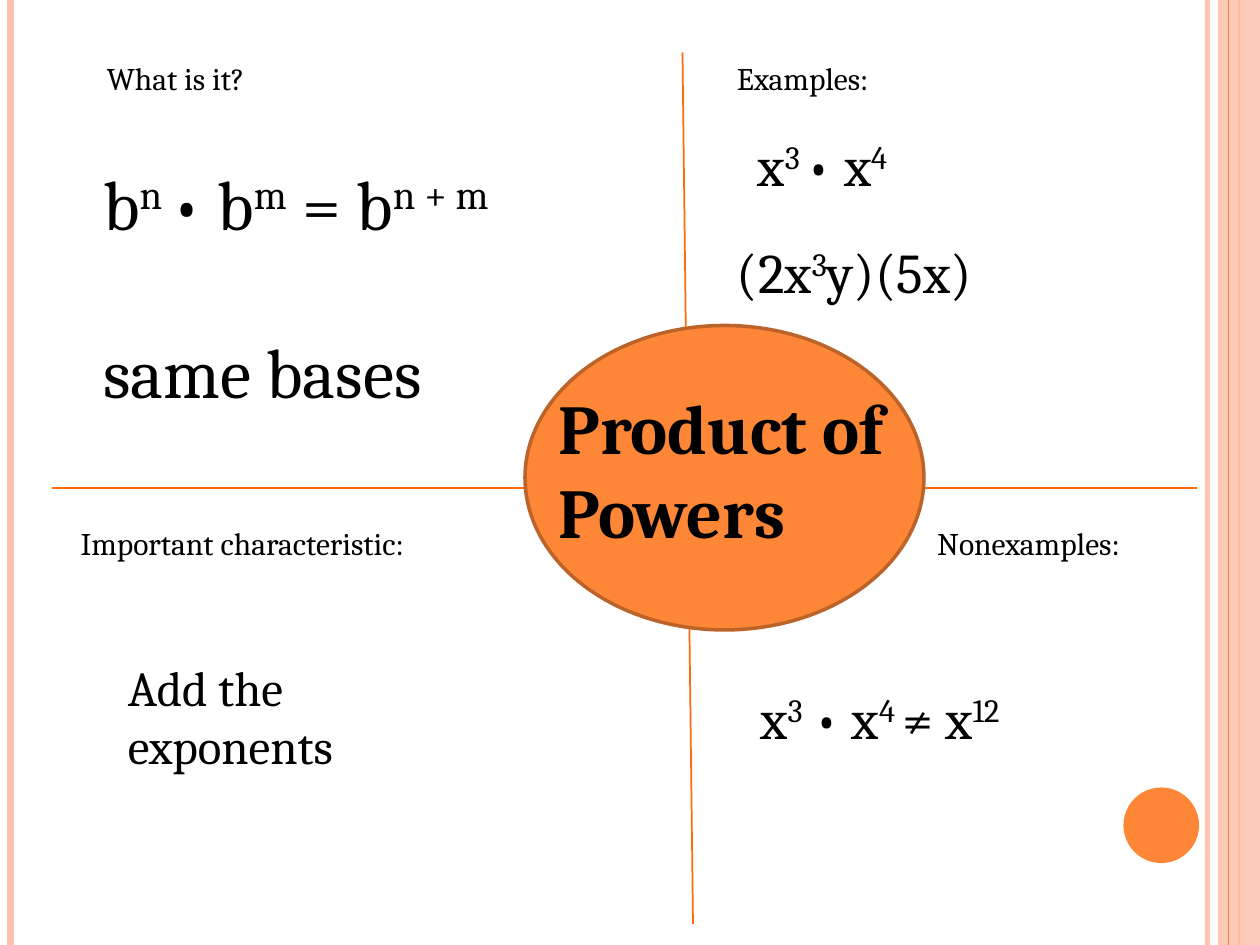
from dataclasses import dataclass

from lxml import etree
from pptx import Presentation
from pptx.dml.color import RGBColor
from pptx.enum import shapes, text
from pptx.oxml.ns import qn
from pptx.util import Pt


@dataclass(frozen=True)
class Theme:
    font: str = "Cambria"
    ink: str = "000000"
    orange: str = "FE8637"
    outline: str = "BC6329"
    divider: str = "FF6B0A"
    peach: str = "FEC3AE"
    label: float = 18
    note: float = 28
    example: float = 32
    headline: float = 40


@dataclass(frozen=True)
class Line:
    start: tuple[float, float]
    end: tuple[float, float]
    color: str
    width: float
    opacity: int = 100


@dataclass(frozen=True)
class TextBlock:
    """Each paragraph alternates plain and superscript pieces, plain first."""
    left: float
    top: float
    width: float
    height: float
    size: float
    paragraphs: tuple[tuple[str, ...], ...]
    wrap: bool = True
    gap: float = 0


THEME = Theme()
WIDTH, HEIGHT = 720, 540


def stripe(x: float, color: str, width: float, opacity: int = 100) -> Line:
    return Line((x, 0), (x, HEIGHT), color, width, opacity)


def label(left: float, top: float, width: float, wording: str) -> TextBlock:
    return TextBlock(left, top, width, 29, THEME.label, ((wording,),))


def example(left: float, top: float, width: float, *pieces: str) -> TextBlock:
    return TextBlock(left, top, width, 46, THEME.example, (pieces,), wrap=False)


EDGE_STRIPES = (
    stripe(690, THEME.peach, 3, 93),
    stripe(6, THEME.peach, 4.5),
    stripe(708, THEME.orange, 1.5),
)
BAND_STRIPE = stripe(702, THEME.orange, 0.75)
DIVIDERS = (
    Line((390, 30), (396, 528), THEME.divider, 1),
    Line((30, 279), (684, 279), THEME.divider, 1),
)
TEXT_BLOCKS = (
    label(414, 30, 174, "Examples:"),
    label(54, 30, 222, "What is it?"),
    TextBlock(52, 88, 288, 225, THEME.headline,
              (("b", "n ", "• b", "m", " = b", "n + m"), ("same bases",)),
              wrap=False, gap=48),
    label(528.5, 296, 174, "Nonexamples:"),
    label(39, 296, 261, "Important characteristic:"),
    TextBlock(66, 372, 228, 75, THEME.note, (("Add the",), ("exponents",))),
    example(426, 71, 120, "x", "3 ", "• x", "4"),
    example(414, 132, 166, "(2x", "3", "y)(5x)"),
    example(427.5, 387, 188, "x", "3", " • x", "4 ", "≠ x", "12"),
)


def set_opacity(element, percent: int) -> None:
    if percent < 100:
        color = next(element.iter(qn("a:srgbClr")))
        etree.SubElement(color, qn("a:alpha"), val=str(percent * 1000))


def draw_line(slide, line: Line) -> None:
    connector = slide.shapes.add_connector(
        shapes.MSO_CONNECTOR.STRAIGHT, *map(Pt, line.start + line.end))
    connector.line.color.rgb = RGBColor.from_string(line.color)
    connector.line.width = Pt(line.width)
    set_opacity(connector.element.spPr, line.opacity)
    etree.SubElement(connector.element.spPr, qn("a:effectLst"))


def draw_shape(slide, kind, left: float, top: float, width: float, height: float,
               fill: str, outline: str | None = None, opacity: int = 100):
    shape = slide.shapes.add_shape(kind, *map(Pt, (left, top, width, height)))
    shape.shadow.inherit = False
    shape.fill.solid()
    shape.fill.fore_color.rgb = RGBColor.from_string(fill)
    set_opacity(shape.element.spPr, opacity)
    if outline:
        shape.line.color.rgb = RGBColor.from_string(outline)
        shape.line.width = Pt(2)
    else:
        shape.line.fill.background()
    return shape


def add_run(paragraph, wording: str, size: float, bold: bool = False,
            raised: bool = False) -> None:
    run = paragraph.add_run()
    run.text = wording
    run.font.name = THEME.font
    run.font.size = Pt(size)
    run.font.bold = bold
    run.font.color.rgb = RGBColor.from_string(THEME.ink)
    if raised:
        run.font._element.set("baseline", "30000")


def draw_text(slide, block: TextBlock) -> None:
    box = slide.shapes.add_textbox(
        *map(Pt, (block.left, block.top, block.width, block.height)))
    frame = box.text_frame
    frame.word_wrap = block.wrap
    for index, pieces in enumerate(block.paragraphs):
        paragraph = frame.add_paragraph() if index else frame.paragraphs[0]
        if index:
            paragraph.space_before = Pt(block.gap)
        for position, piece in enumerate(pieces):
            add_run(paragraph, piece, block.size, raised=position % 2 == 1)


def place_title(slide, backdrop) -> None:
    """Put the title placeholder directly in front of its backdrop."""
    title = slide.shapes.title
    title.left, title.top, title.width, title.height = map(Pt, (312, 216, 228, 104.4))
    frame = title.text_frame
    frame.word_wrap = True
    frame.auto_size = text.MSO_AUTO_SIZE.NONE
    frame.vertical_anchor = text.MSO_ANCHOR.TOP
    paragraph = frame.paragraphs[0]
    paragraph.alignment = text.PP_ALIGN.LEFT
    add_run(paragraph, "Product of Powers", THEME.headline, bold=True)
    backdrop.element.addnext(title.element)


def main() -> None:
    presentation = Presentation()
    presentation.slide_width, presentation.slide_height = Pt(WIDTH), Pt(HEIGHT)
    slide = presentation.slides.add_slide(presentation.slide_layouts[5])
    oval = shapes.MSO_SHAPE.OVAL

    for line in EDGE_STRIPES:
        draw_line(slide, line)
    draw_shape(slide, shapes.MSO_SHAPE.RECTANGLE, 696, 0, 24, HEIGHT,
               THEME.peach, opacity=87)
    draw_line(slide, BAND_STRIPE)
    draw_shape(slide, oval, 642, 450, 43.2, 43.2, THEME.orange)

    for line in DIVIDERS:
        draw_line(slide, line)
    center = draw_shape(slide, oval, 300, 186, 228, 174, THEME.orange, THEME.outline)
    place_title(slide, center)
    for block in TEXT_BLOCKS:
        draw_text(slide, block)

    presentation.save("out.pptx")


if __name__ == "__main__":
    main()
